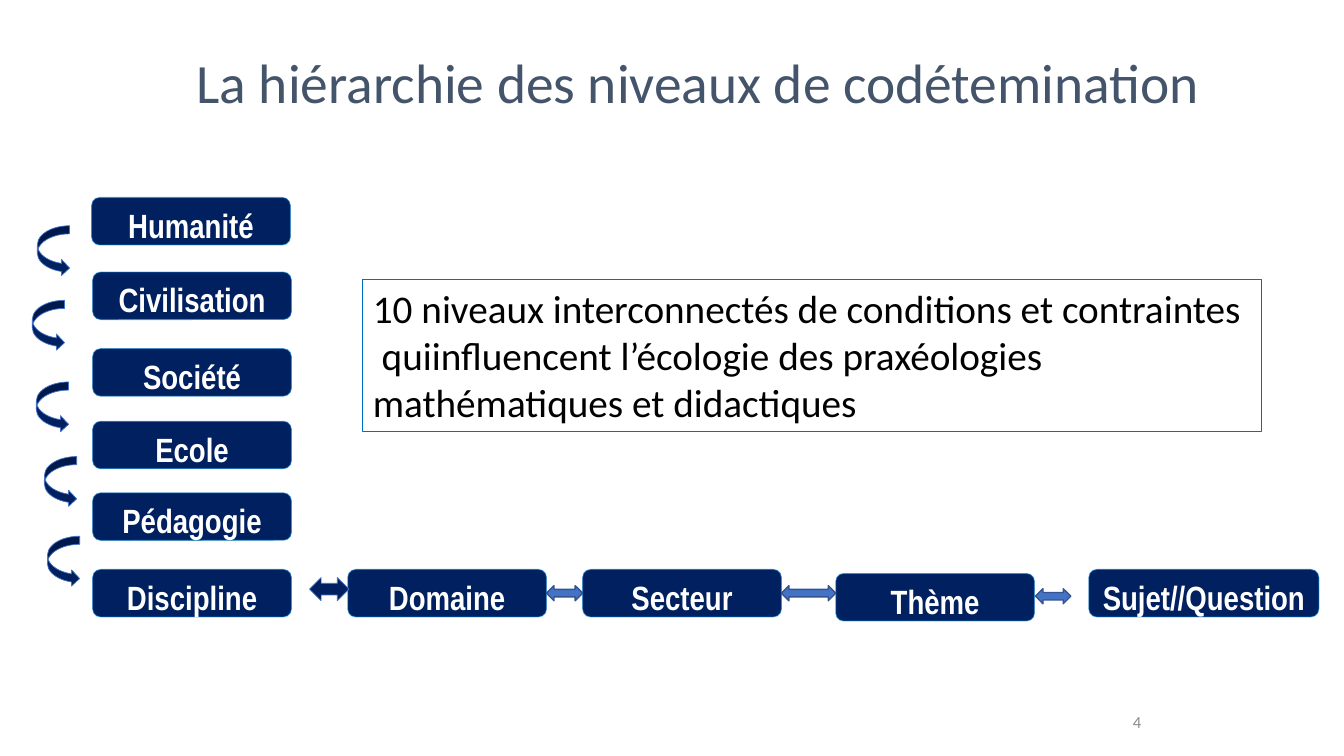
from dataclasses import dataclass

from lxml.etree import SubElement
from pptx import Presentation
from pptx.dml.color import RGBColor
from pptx.enum.shapes import MSO_SHAPE
from pptx.enum.text import MSO_ANCHOR, PP_ALIGN
from pptx.oxml.ns import qn
from pptx.util import Emu, Pt

EMU_PER_PX = 9144  # 100 px to the inch


@dataclass(frozen=True)
class Theme:
    navy: str = "002060"
    blue: str = "4472C4"
    dark_blue: str = "325491"
    outline: str = "0070C0"
    title: str = "44546A"
    text: str = "000000"
    white: str = "FFFFFF"
    grey: str = "8C8C8C"
    body_font: str = "Calibri"
    level_font: str = "Arial Narrow"
    title_size: float = 39.6
    body_size: int = 28
    level_size: int = 24
    number_size: int = 12


THEME = Theme()

LEVEL_WIDTH, LEVEL_HEIGHT = 197, 47
LEVELS = [
    ("Humanité", 91, 196, LEVEL_WIDTH),
    ("Civilisation", 92, 270, LEVEL_WIDTH),
    ("Société", 92, 346, LEVEL_WIDTH),
    ("Ecole", 92, 418, LEVEL_WIDTH),
    ("Pédagogie", 92, 489, LEVEL_WIDTH),
    ("Discipline", 92, 565, LEVEL_WIDTH),
    ("Domaine", 345, 565, LEVEL_WIDTH),
    ("Secteur", 578, 565, LEVEL_WIDTH),
    ("Thème", 829, 569, LEVEL_WIDTH),
    ("Sujet//Question", 1080, 565, 228),
]
CURVED_ARROWS = [(37, 224), (32, 298), (36, 379), (44, 453), (47, 532)]
DOUBLE_ARROWS = [(542, 581, 36), (775, 581, 54), (1027, 584, 35)]
SUMMARY = [
    "10 niveaux interconnectés de conditions et contraintes",
    " quiinfluencent l’écologie des praxéologies",
    "mathématiques et didactiques",
]


def px(*lengths):
    return [Emu(length * EMU_PER_PX) for length in lengths]


def color(value):
    return RGBColor.from_string(value)


def format_text(text_frame, font, size, fill, bold=False, alignment=None):
    for paragraph in text_frame.paragraphs:
        paragraph.alignment = alignment
        for run in paragraph.runs:
            run.font.name = font
            run.font.size = Pt(size)
            run.font.bold = bold
            run.font.color.rgb = color(fill)


def add_filled_shape(slide, kind, box, fill, line, line_width):
    shape = slide.shapes.add_shape(kind, *px(*box))
    shape.shadow.inherit = False
    shape.fill.solid()
    shape.fill.fore_color.rgb = color(fill)
    shape.line.color.rgb = color(line)
    shape.line.width = Pt(line_width)
    return shape


def add_level(slide, name, left, top, width):
    shape = add_filled_shape(slide, MSO_SHAPE.ROUNDED_RECTANGLE,
                             (left, top, width, LEVEL_HEIGHT),
                             THEME.navy, THEME.outline, 0.75)
    line_color = shape.line._get_or_add_ln().find(".//" + qn("a:srgbClr"))
    SubElement(line_color, qn("a:alpha"), val="57000")
    text_frame = shape.text_frame
    text_frame.text = name
    text_frame.word_wrap = False
    text_frame.vertical_anchor = MSO_ANCHOR.TOP
    text_frame.margin_top, text_frame.margin_bottom = px(5, 0)
    format_text(text_frame, THEME.level_font, THEME.level_size, THEME.white,
                bold=True, alignment=PP_ALIGN.CENTER)


def set_title(slide, text):
    title = slide.shapes.title
    title.left, title.top, title.width, title.height = px(85, 22, 1183, 125)
    text_frame = title.text_frame
    text_frame.text = text
    text_frame.vertical_anchor = MSO_ANCHOR.MIDDLE
    text_frame.margin_left, = px(110)
    text_frame.paragraphs[0].line_spacing = 0.9
    format_text(text_frame, THEME.body_font, THEME.title_size, THEME.title,
                alignment=PP_ALIGN.LEFT)


def add_summary(slide):
    box = slide.shapes.add_textbox(*px(360, 277, 891, 151))
    box.line.color.rgb = color(THEME.outline)
    box.line.width = Pt(0.75)
    box.text_frame.text = "\n".join(SUMMARY)
    box.text_frame.word_wrap = False
    format_text(box.text_frame, THEME.body_font, THEME.body_size, THEME.text,
                alignment=PP_ALIGN.LEFT)


def add_slide_number(slide, number):
    box = slide.shapes.add_textbox(*px(909, 696, 233, 40))
    box.text_frame.text = number
    box.text_frame.word_wrap = True
    box.text_frame.vertical_anchor = MSO_ANCHOR.MIDDLE
    format_text(box.text_frame, THEME.body_font, THEME.number_size, THEME.grey,
                alignment=PP_ALIGN.RIGHT)


def main():
    presentation = Presentation()
    presentation.slide_width, presentation.slide_height = px(1333, 750)
    title_only = presentation.slide_layouts[5]
    slide = presentation.slides.add_slide(title_only)

    set_title(slide, "La hiérarchie des niveaux de codétemination")
    add_slide_number(slide, "4")
    for level in LEVELS:
        add_level(slide, *level)
    add_summary(slide)
    for left, top in CURVED_ARROWS:
        add_filled_shape(slide, MSO_SHAPE.CURVED_RIGHT_ARROW,
                         (left, top, 32, 50), THEME.navy, THEME.blue, 0.5)
    add_filled_shape(slide, MSO_SHAPE.LEFT_RIGHT_ARROW,
                     (307, 573, 39, 23), THEME.navy, THEME.blue, 0.5)
    for left, top, width in DOUBLE_ARROWS:
        add_filled_shape(slide, MSO_SHAPE.LEFT_RIGHT_ARROW,
                         (left, top, width, 15), THEME.blue, THEME.dark_blue, 1)

    presentation.save("out.pptx")


if __name__ == "__main__":
    main()
